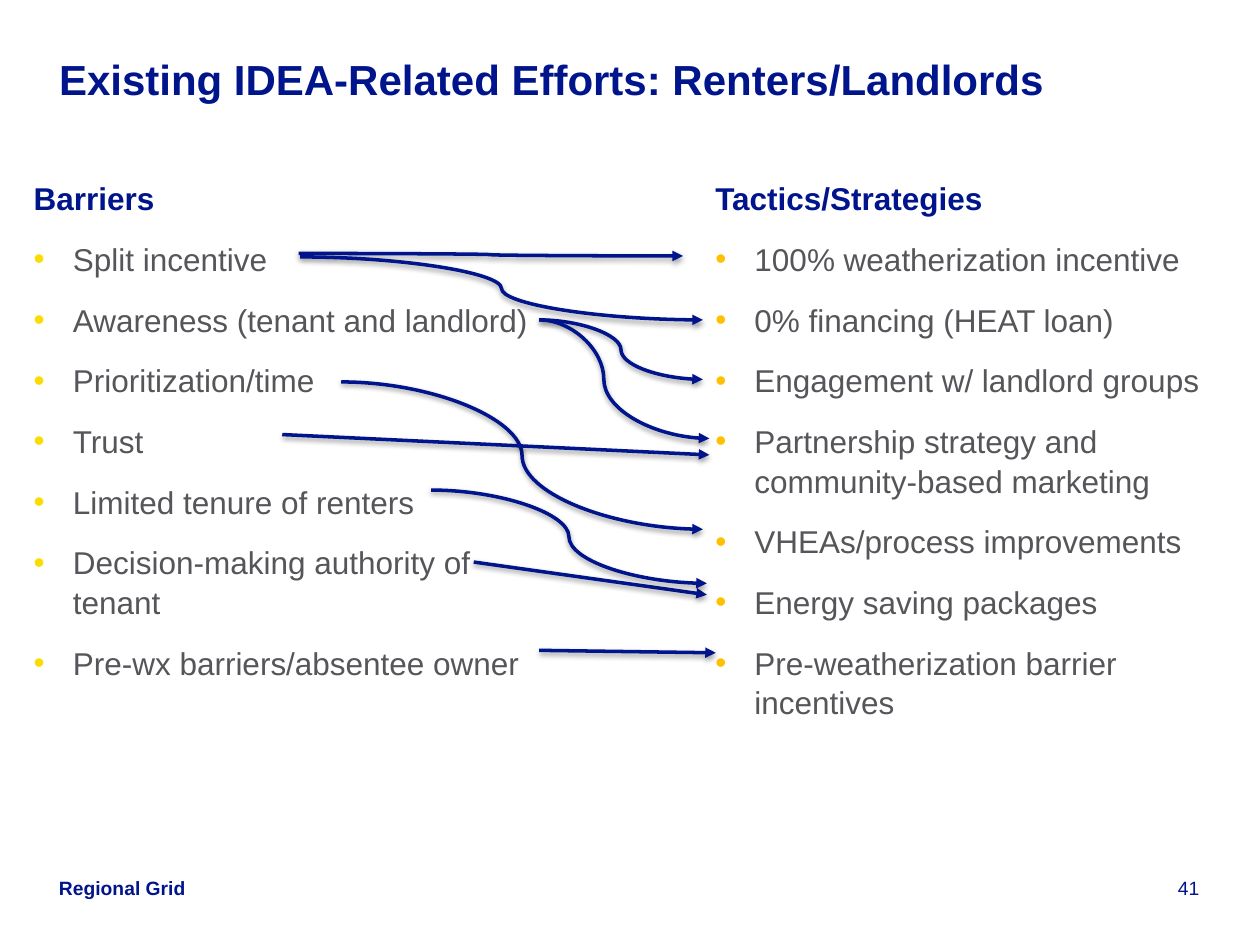
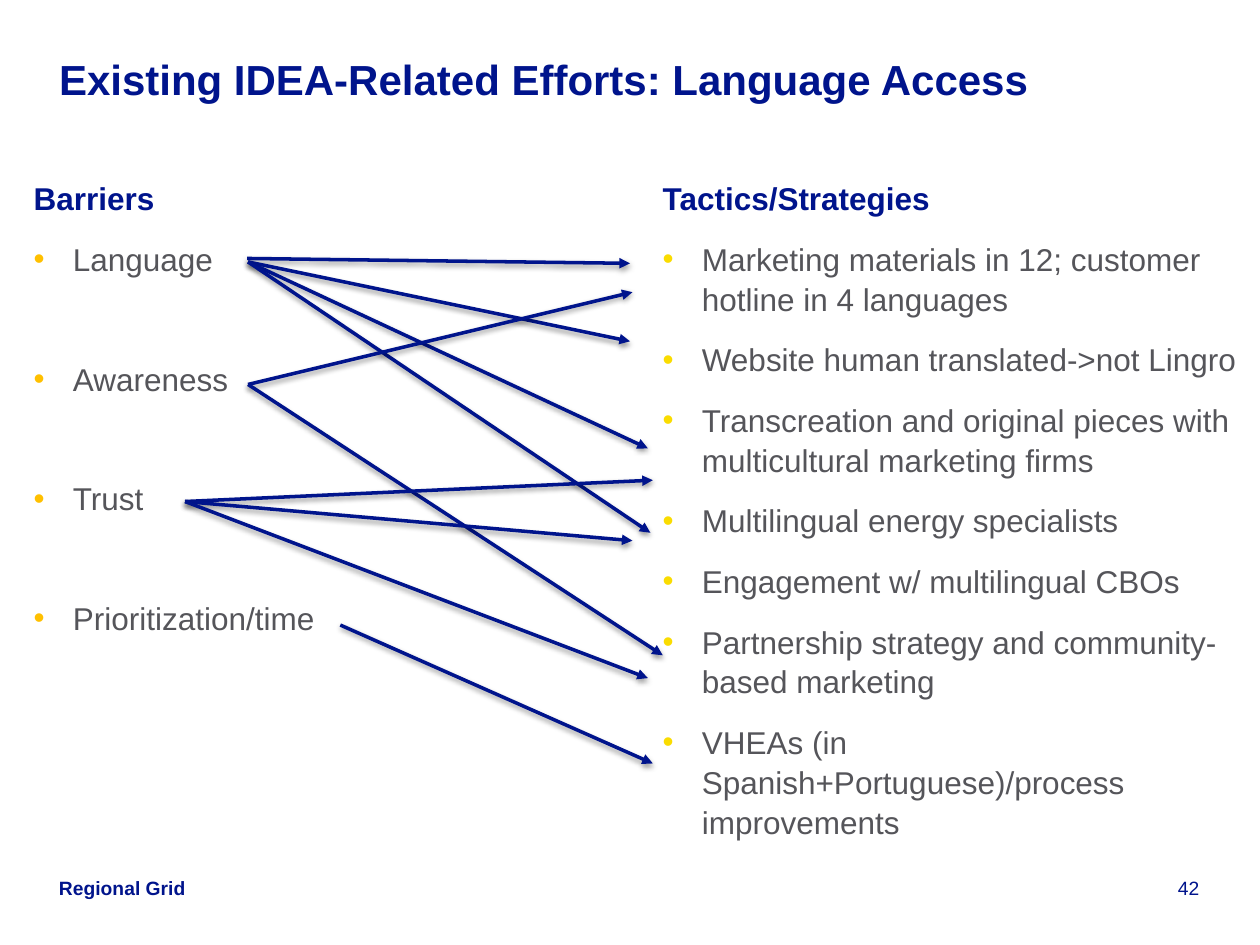
from dataclasses import dataclass

from lxml.etree import SubElement
from pptx import Presentation
from pptx.dml.color import RGBColor
from pptx.enum.shapes import MSO_CONNECTOR
from pptx.enum.text import MSO_ANCHOR, MSO_AUTO_SIZE, PP_ALIGN
from pptx.oxml.ns import qn
from pptx.util import Cm, Pt


@dataclass(frozen=True)
class Theme:
    font: str = "Arial"
    navy: str = "00148C"
    grey: str = "55555A"
    yellow: str = "FADC00"
    amber: str = "FFC000"
    title_size: float = 24
    body_size: float = 18
    footer_size: float = 11
    line_width: float = 2
    line_spacing: float = 1.05
    item_gap: float = 12
    wide_gap: float = 45.7


THEME = Theme()
FOOTER = "Regional Grid"
COLUMN_TOP = 3.45
STRAIGHT, CURVE = MSO_CONNECTOR.STRAIGHT, MSO_CONNECTOR.CURVE


def add_xml(parent, tag, **attrs):
    return SubElement(parent, qn(tag), {k: str(v) for k, v in attrs.items()})


class Deck:
    """Holds the theme and the slide being built."""

    def __init__(self, theme):
        self.theme = theme
        self.prs = Presentation()
        self.prs.slide_width, self.prs.slide_height = Cm(25.4), Cm(19.05)
        self.s = None

    def slide(self, title, number):
        self.s = self.prs.slides.add_slide(self.prs.slide_layouts[5])
        t = self.theme
        # Title
        sp = self.s.shapes.title
        sp.left, sp.top, sp.width, sp.height = Cm(1.19), Cm(1.02), Cm(22.53), Cm(1.02)
        tf = self.frame(sp, MSO_ANCHOR.TOP, 0, 0)
        self.put_text(tf.paragraphs[0], title, t.title_size, bold=True,
                      line_spacing=t.line_spacing)
        # Footer and slide number
        for text, x, w, bold, align in ((str(number), 22.71, 1.47, False, PP_ALIGN.RIGHT),
                                        (FOOTER, 1.19, 3, True, PP_ALIGN.LEFT)):
            sp = self.s.shapes.add_textbox(Cm(x), Cm(17.65), Cm(w), Cm(0.48))
            tf = self.frame(sp, MSO_ANCHOR.BOTTOM, 0, 0)
            self.put_text(tf.paragraphs[0], text, t.footer_size, bold=bold, alignment=align)

    def frame(self, sp, anchor, side, end):
        tf = sp.text_frame
        values = dict(word_wrap=True, auto_size=MSO_AUTO_SIZE.NONE, vertical_anchor=anchor,
                      margin_left=Cm(side), margin_right=Cm(side),
                      margin_top=Cm(end), margin_bottom=Cm(end))
        for name, value in values.items():
            setattr(tf, name, value)
        return tf

    def put_text(self, p, text, size, color=None, bold=False, alignment=PP_ALIGN.LEFT,
                 **spacing):
        for name, value in dict(alignment=alignment, **spacing).items():
            setattr(p, name, value)
        r = p.add_run()
        r.text = text
        for name, value in dict(name=self.theme.font, size=Pt(size), bold=bold).items():
            setattr(r.font, name, value)
        r.font.color.rgb = RGBColor.from_string(color or self.theme.navy)

    def bullet(self, p, color):
        pPr = p._p.get_or_add_pPr()
        pPr.set("marL", str(Cm(0.79)))
        pPr.set("indent", str(-Cm(0.79)))
        add_xml(add_xml(pPr, "a:buClr"), "a:srgbClr", val=color)
        add_xml(pPr, "a:buFont", typeface=self.theme.font)
        add_xml(pPr, "a:buChar", char="•")

    def column(self, heading, items, x, w, h, dot, gap=None):
        t = self.theme
        sp = self.s.shapes.add_textbox(Cm(x), Cm(COLUMN_TOP), Cm(w), Cm(h))
        tf = self.frame(sp, MSO_ANCHOR.TOP, 0.25, 0.13)
        self.put_text(tf.paragraphs[0], heading, t.body_size, bold=True,
                      line_spacing=t.line_spacing)
        for i, item in enumerate(items):
            p = tf.add_paragraph()
            self.bullet(p, dot)
            before = gap if gap and i else t.item_gap
            self.put_text(p, item, t.body_size, t.grey,
                          line_spacing=t.line_spacing, space_before=Pt(before))

    def arrow(self, start, end, kind=STRAIGHT, bend=None):
        c = self.s.shapes.add_connector(kind, *(Cm(v) for v in (*start, *end)))
        c.line.color.rgb = RGBColor.from_string(self.theme.navy)
        c.line.width = Pt(self.theme.line_width)
        spPr = c._element.spPr
        add_xml(spPr.find(qn("a:ln")), "a:tailEnd", type="triangle")
        if bend:
            guides = spPr.find(qn("a:prstGeom")).find(qn("a:avLst"))
            add_xml(guides, "a:gd", name="adj1", fmla=f"val {round(bend * 100000)}")
        # Soft shadow below the line
        shadow = add_xml(add_xml(spPr, "a:effectLst"), "a:outerShdw", blurRad=Pt(3.1),
                         dist=Pt(1.6), dir=5400000, rotWithShape=0)
        add_xml(add_xml(shadow, "a:srgbClr", val="000000"), "a:alpha", val=38000)


def renters_slide(deck):
    deck.slide("Existing IDEA-Related Efforts: Renters/Landlords", 41)
    deck.column("Barriers", [
        "Split incentive",
        "Awareness (tenant and landlord)",
        "Prioritization/time",
        "Trust",
        "Limited tenure of renters",
        "Decision-making authority of tenant",
        "Pre-wx barriers/absentee owner",
    ], 0.43, 11.23, 13.21, THEME.yellow)
    deck.column("Tactics/Strategies", [
        "100% weatherization incentive",
        "0% financing (HEAT loan)",
        "Engagement w/ landlord groups",
        "Partnership strategy and community-based marketing",
        "VHEAs/process improvements",
        "Energy saving packages",
        "Pre-weatherization barrier incentives",
    ], 14.17, 11.23, 13.21, THEME.amber)
    # Barrier to tactic
    awareness = (10.87, 6.45)
    for link in (
        ((6.02, 5.11), (13.77, 5.16), CURVE),
        ((6.05, 5.18), (14.17, 6.45), CURVE),
        (awareness, (14.17, 7.65), CURVE),
        (awareness, (14.3, 8.84), CURVE, 0.38),
        ((9.55, 11.33), (14.25, 11.99)),
        ((6.88, 7.7), (14.17, 10.67), CURVE),
        ((5.69, 8.76), (14.3, 9.17)),
        ((10.87, 13.11), (14.43, 13.16)),
        ((8.69, 9.88), (14.25, 11.76), CURVE),
    ):
        deck.arrow(*link)


def language_slide(deck):
    deck.slide("Existing IDEA-Related Efforts: Language Access", 42)
    deck.column("Barriers", ["Language", "Awareness", "Trust", "Prioritization/time"],
                0.43, 7.29, 13.21, THEME.amber, THEME.wide_gap)
    deck.column("Tactics/Strategies", [
        "Marketing materials in 12; customer hotline in 4 languages",
        "Website human translated->not Lingro",
        "Transcreation and original pieces with multicultural marketing firms",
        "Multilingual energy specialists",
        "Engagement w/ multilingual CBOs",
        "Partnership strategy and community-based marketing",
        "VHEAs (in Spanish+Portuguese)/process improvements",
    ], 13.11, 12.29, 14.6, THEME.yellow)
    # Each barrier fans out to its tactics
    fans = {
        (4.98, 5.21): [(12.7, 5.31)],
        (5, 5.28): [(12.7, 6.88), (13.06, 9.04), (13.11, 10.74)],
        (5, 7.75): [(12.75, 5.89), (13.36, 13.21)],
        (3.73, 10.11): [(13.16, 9.68), (12.75, 10.9), (13.06, 13.67)],
        (6.86, 12.6): [(13.16, 15.39)],
    }
    for start, ends in fans.items():
        for end in ends:
            deck.arrow(start, end)


def main():
    deck = Deck(THEME)
    renters_slide(deck)
    language_slide(deck)
    deck.prs.save("out.pptx")


if __name__ == "__main__":
    main()
